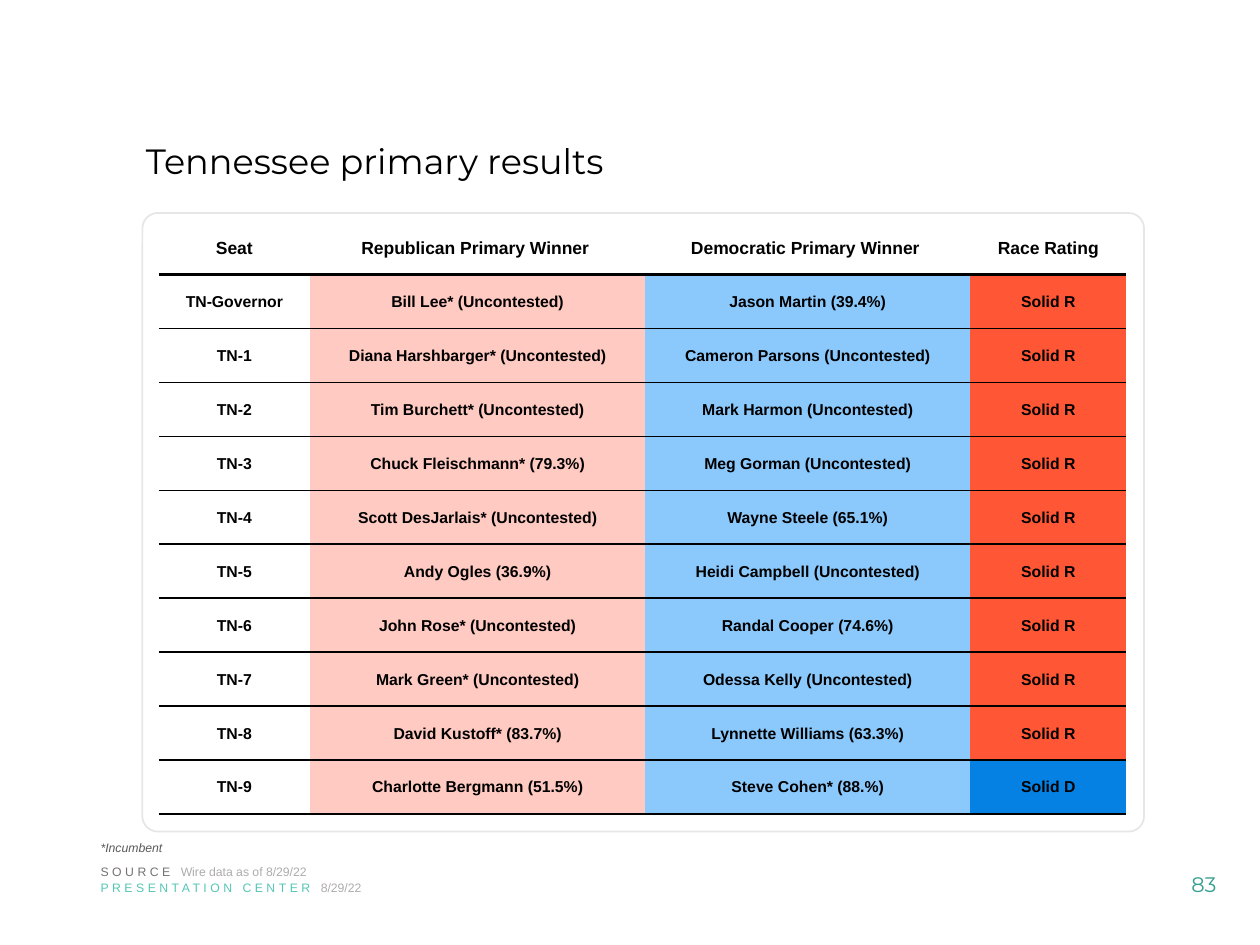
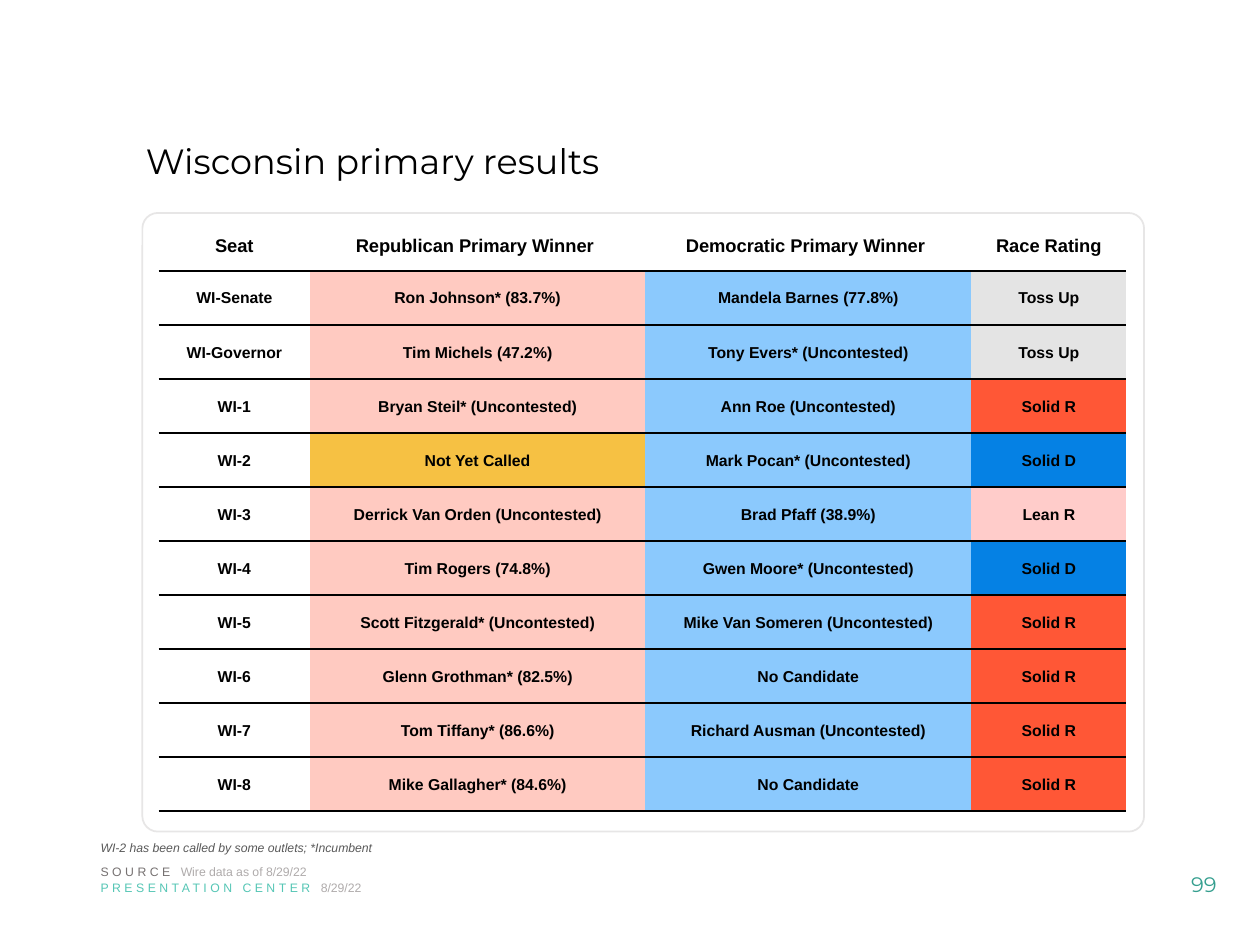
from dataclasses import dataclass

from lxml.etree import SubElement
from pptx import Presentation
from pptx.dml.color import RGBColor
from pptx.enum.shapes import MSO_SHAPE as Preset
from pptx.enum.text import MSO_ANCHOR as Anchor, PP_ALIGN as Align
from pptx.oxml import parse_xml
from pptx.oxml.ns import nsdecls, qn
from pptx.util import Inches, Length, Pt

BLACK = RGBColor(0x00, 0x00, 0x00)
WHITE = RGBColor(0xFF, 0xFF, 0xFF)
CARD_EDGE = RGBColor(0xE7, 0xE6, 0xE6)
NOTE_GRAY = RGBColor(0x59, 0x59, 0x59)
LABEL_GRAY = RGBColor(0x76, 0x71, 0x71)
VALUE_GRAY = RGBColor(0xAF, 0xAB, 0xAB)
TEAL = RGBColor(0x55, 0xC6, 0xB5)
DARK_TEAL = RGBColor(0x35, 0x9F, 0x8F)
PALE_RED = RGBColor(0xFF, 0xCA, 0xC1)
PALE_BLUE = RGBColor(0x8B, 0xC9, 0xFD)
AMBER = RGBColor(0xF6, 0xC1, 0x43)

COLUMN_FILLS = (WHITE, PALE_RED, PALE_BLUE, WHITE)
TEXT_FILLS = {
    "Not Yet Called": AMBER,
    "Solid R": RGBColor(0xFF, 0x57, 0x36),
    "Lean R": RGBColor(0xFF, 0xCC, 0xCA),
    "Solid D": RGBColor(0x05, 0x81, 0xE4),
    "Toss Up": RGBColor(0xE4, 0xE4, 0xE4),
}
HEADERS = ("Seat", "Republican Primary Winner ", "Democratic Primary Winner ", "Race Rating")
TABLE_LEFT = Inches(1.26)
TABLE_HEIGHT = Inches(4.7)
HEADER_RULE = Pt(1.5)
ROW_RULE = Pt(1)


@dataclass(frozen=True)
class Box:
    left: float
    top: float
    width: float
    height: float

    def lengths(self) -> tuple[Length, ...]:
        return tuple(Inches(side) for side in (self.left, self.top, self.width, self.height))


@dataclass(frozen=True)
class TextStyle:
    size: float
    color: RGBColor
    name: str = "Arial"
    bold: bool = False
    italic: bool = False
    spacing: int = 0


@dataclass(frozen=True)
class StateResults:
    title: str
    page: str
    note: str
    table_top: float
    header_height: float
    header_size: float
    column_widths: tuple[float, ...]
    rows: tuple[tuple[str, ...], ...]


TITLE = TextStyle(20, BLACK, "Montserrat")
PAGE = TextStyle(12, DARK_TEAL, "Montserrat")
NOTE = TextStyle(7, NOTE_GRAY, italic=True)
VALUE = TextStyle(7, VALUE_GRAY)
CENTER_LABEL = TextStyle(7, TEAL, spacing=200)
SOURCE_LABEL = TextStyle(7, LABEL_GRAY, spacing=200)
BODY = TextStyle(9, BLACK, bold=True)

CARD_BOX = Box(1.13, 1.69, 7.95, 4.91)
TITLE_BOX = Box(1.06, 0.9, 8.03, 0.79)
PAGE_BOX = Box(9.11, 6.82, 0.89, 0.4)
NOTE_BOX = Box(0.7, 6.62, 9.02, 0.22)
FOOTERS = (
    (Box(0.7, 6.94, 2.94, 0.22), (("PRESENTATION CENTER ", CENTER_LABEL), ("8/29/22", VALUE))),
    (Box(0.7, 6.81, 3.99, 0.22), (("SOURCE ", SOURCE_LABEL), ("Wire data as of 8/29/22", VALUE))),
)

TENNESSEE = StateResults(
    "Tennessee primary results", "83", "*Incumbent", 1.76, 0.42, 10, (1.2, 2.66, 2.58, 1.24),
    (
        ("TN-Governor", "Bill Lee* (Uncontested)", "Jason Martin (39.4%)", "Solid R"),
        ("TN-1", "Diana Harshbarger* (Uncontested)", "Cameron Parsons (Uncontested)", "Solid R"),
        ("TN-2", "Tim Burchett* (Uncontested)", "Mark Harmon (Uncontested)", "Solid R"),
        ("TN-3", "Chuck Fleischmann* (79.3%)", "Meg Gorman (Uncontested)", "Solid R"),
        ("TN-4", "Scott DesJarlais* (Uncontested)", "Wayne Steele (65.1%)", "Solid R"),
        ("TN-5", "Andy Ogles (36.9%)", "Heidi Campbell (Uncontested)", "Solid R"),
        ("TN-6", "John Rose* (Uncontested)", "Randal Cooper (74.6%)", "Solid R"),
        ("TN-7", "Mark Green* (Uncontested)", "Odessa Kelly (Uncontested)", "Solid R"),
        ("TN-8", "David Kustoff* (83.7%)", "Lynnette Williams (63.3%)", "Solid R"),
        ("TN-9", "Charlotte Bergmann (51.5%)", "Steve Cohen* (88.%)", "Solid D"),
    ),
)
WISCONSIN = StateResults(
    "Wisconsin primary results", "99", "WI-2 has been called by some outlets; *Incumbent",
    1.74, 0.41, 10.5, (1.2, 2.66, 2.59, 1.23),
    (
        ("WI-Senate", "Ron Johnson* (83.7%)", "Mandela Barnes (77.8%)", "Toss Up"),
        ("WI-Governor", "Tim Michels (47.2%)", "Tony Evers* (Uncontested)", "Toss Up"),
        ("WI-1", "Bryan Steil* (Uncontested)", "Ann Roe (Uncontested)", "Solid R"),
        ("WI-2", "Not Yet Called", "Mark Pocan* (Uncontested)", "Solid D"),
        ("WI-3", "Derrick Van Orden (Uncontested)", "Brad Pfaff (38.9%)", "Lean R"),
        ("WI-4", "Tim Rogers (74.8%)", "Gwen Moore* (Uncontested)", "Solid D"),
        ("WI-5", "Scott Fitzgerald* (Uncontested)", "Mike Van Someren (Uncontested)", "Solid R"),
        ("WI-6", "Glenn Grothman* (82.5%)", "No Candidate", "Solid R"),
        ("WI-7", "Tom Tiffany* (86.6%)", "Richard Ausman (Uncontested)", "Solid R"),
        ("WI-8", "Mike Gallagher* (84.6%)", "No Candidate", "Solid R"),
    ),
)


def add_run(paragraph, text: str, style: TextStyle) -> None:
    run = paragraph.add_run()
    run.text = text
    formats = {"name": style.name, "size": Pt(style.size), "bold": style.bold, "italic": style.italic}
    for attribute, value in formats.items():
        setattr(run.font, attribute, value)
    run.font.color.rgb = style.color
    if style.spacing:
        run.font._element.set("spc", str(style.spacing))


def add_text(slide, box: Box, runs: tuple[tuple[str, TextStyle], ...],
             anchor: Anchor = Anchor.TOP, align: Align = Align.LEFT, line_spacing: float = 1.0) -> None:
    frame = slide.shapes.add_textbox(*box.lengths()).text_frame
    frame.word_wrap = True
    frame.vertical_anchor = anchor
    paragraph = frame.paragraphs[0]
    paragraph.alignment = align
    paragraph.line_spacing = line_spacing
    for text, style in runs:
        add_run(paragraph, text, style)


def add_card(slide) -> None:
    card = slide.shapes.add_shape(Preset.ROUNDED_RECTANGLE, *CARD_BOX.lengths())
    card.adjustments[0] = 0.025
    card.shadow.inherit = False
    card.fill.solid()
    card.fill.fore_color.rgb = WHITE
    card.line.color.rgb = CARD_EDGE
    card.line.width = Pt(1)


def set_borders(cell, top: int, bottom: int) -> None:
    properties = cell._tc.get_or_add_tcPr()
    for index, (tag, width) in enumerate((("lnL", 0), ("lnR", 0), ("lnT", top), ("lnB", bottom))):
        line = parse_xml(f'<a:{tag} {nsdecls("a")} w="{width}"/>')
        if width:
            fill = SubElement(line, qn("a:solidFill"))
            SubElement(fill, qn("a:srgbClr"), val=str(BLACK))
        else:
            SubElement(line, qn("a:noFill"))
        properties.insert(index, line)


def fill_cell(cell, text: str, style: TextStyle, fill: RGBColor, top: int, bottom: int) -> None:
    formats = {
        "margin_left": Inches(0.01), "margin_right": Inches(0.01), "margin_top": Inches(0.01),
        "margin_bottom": 0, "vertical_anchor": Anchor.MIDDLE,
    }
    for attribute, value in formats.items():
        setattr(cell, attribute, value)
    cell.fill.solid()
    cell.fill.fore_color.rgb = fill
    set_borders(cell, top, bottom)
    paragraph = cell.text_frame.paragraphs[0]
    paragraph.alignment = Align.CENTER
    add_run(paragraph, text, style)


def add_results_table(slide, state: StateResults) -> None:
    frame = slide.shapes.add_table(
        len(state.rows) + 1, len(HEADERS), TABLE_LEFT, Inches(state.table_top),
        Inches(sum(state.column_widths)), TABLE_HEIGHT)
    table = frame.table
    table.first_row = table.horz_banding = False
    for column, width in zip(table.columns, state.column_widths):
        column.width = Inches(width)
    header_height = Inches(state.header_height)
    row_height = (TABLE_HEIGHT - header_height) // len(state.rows)
    header_style = TextStyle(state.header_size, BLACK, bold=True)
    for row_index, texts in enumerate((HEADERS, *state.rows)):
        is_header = row_index == 0
        table.rows[row_index].height = header_height if is_header else row_height
        top = (0, HEADER_RULE)[row_index] if row_index < 2 else ROW_RULE
        bottom = HEADER_RULE if is_header else ROW_RULE
        for column_index, text in enumerate(texts):
            fill = WHITE if is_header else TEXT_FILLS.get(text, COLUMN_FILLS[column_index])
            style = header_style if is_header else BODY
            fill_cell(table.cell(row_index, column_index), text, style, fill, top, bottom)


def add_state_slide(presentation, state: StateResults) -> None:
    slide = presentation.slides.add_slide(presentation.slide_layouts[6])
    add_text(slide, PAGE_BOX, ((state.page, PAGE),), Anchor.MIDDLE, Align.CENTER)
    add_text(slide, TITLE_BOX, ((state.title, TITLE),), Anchor.MIDDLE, line_spacing=0.9)
    add_card(slide)
    add_text(slide, NOTE_BOX, ((state.note, NOTE),))
    add_results_table(slide, state)
    for box, runs in FOOTERS:
        add_text(slide, box, runs)


def main() -> None:
    presentation = Presentation()
    presentation.slide_width = Inches(10)
    presentation.slide_height = Inches(7.5)
    for state in (TENNESSEE, WISCONSIN):
        add_state_slide(presentation, state)
    presentation.save("out.pptx")


if __name__ == "__main__":
    main()
